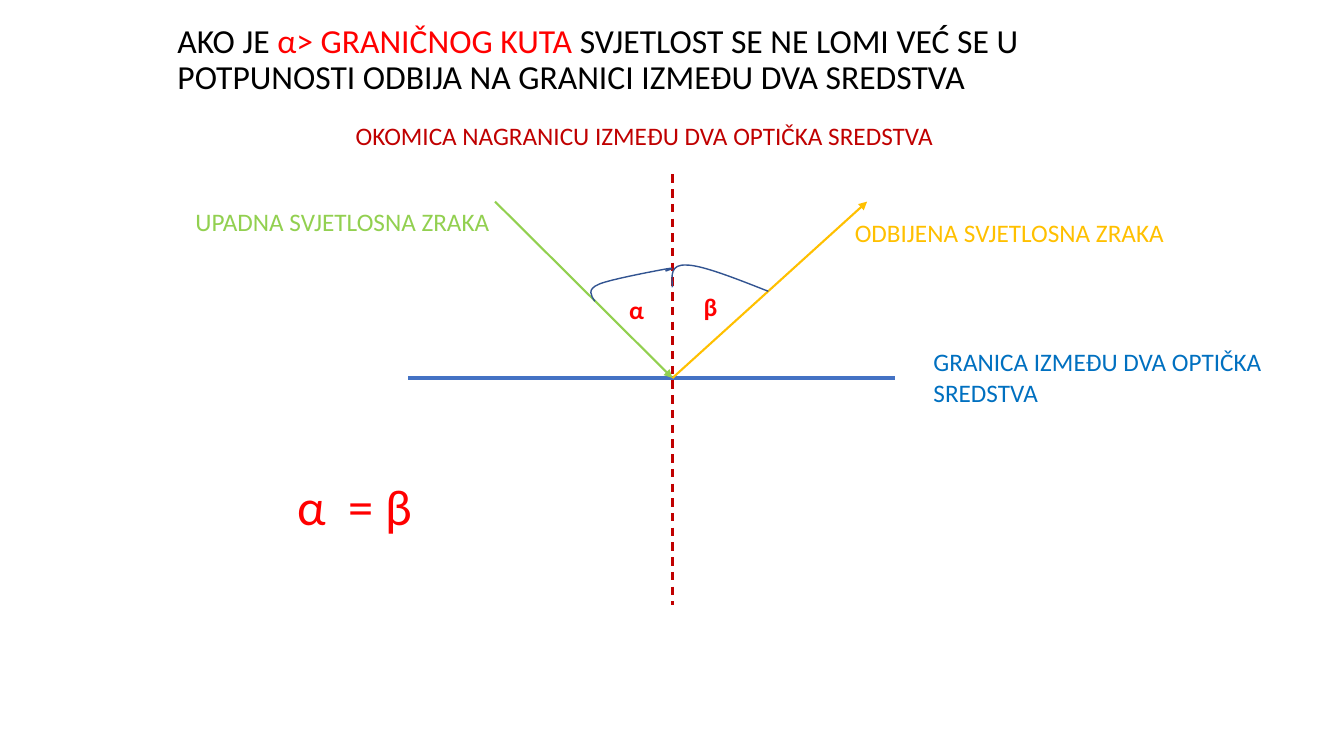
from dataclasses import dataclass

from lxml import etree
from pptx import Presentation
from pptx.dml.color import RGBColor
from pptx.enum.dml import MSO_LINE
from pptx.enum.shapes import MSO_CONNECTOR
from pptx.enum.text import MSO_ANCHOR, MSO_AUTO_SIZE, PP_ALIGN
from pptx.oxml.ns import qn
from pptx.slide import Slide
from pptx.util import Pt

STRAIGHT = MSO_CONNECTOR.STRAIGHT
DASH = MSO_LINE.DASH
TOP = MSO_ANCHOR.TOP
LEFT = PP_ALIGN.LEFT
FIXED = MSO_AUTO_SIZE.NONE
GROW = MSO_AUTO_SIZE.SHAPE_TO_FIT_TEXT

EMU_PER_PX = 9144  # 100 px to the inch
FONT = "Calibri"
TITLE_ONLY_LAYOUT = 5

BLACK = "000000"
RED = "FF0000"
DARK_RED = "C00000"
GREEN = "92D050"
GOLD = "FFC000"
BLUE = "0070C0"
BOUNDARY_BLUE = "4472C4"
ARC_BLUE = "325491"

Point = tuple[int, int]


@dataclass(frozen=True)
class Line:
    start: Point
    end: Point
    color: str
    width: float = 1.5
    dashed: bool = False
    arrow: bool = False


@dataclass(frozen=True)
class Label:
    text: str
    left: int
    top: int
    width: int
    height: int
    color: str
    size: int = 18
    bold: bool = False


HIT = (667, 375)

LINES = [
    Line((405, 375), (888, 375), BOUNDARY_BLUE, width=3),
    Line((667, 173), (667, 600), DARK_RED, dashed=True),
    Line((491, 200), HIT, GREEN, arrow=True),
    Line(HIT, (860, 200), GOLD, arrow=True),
]

# Start point, then three Bézier points for each curve
ANGLE_ARCS: list[list[Point]] = [
    [(590, 299), (586, 293), (582, 287), (594, 282), (605, 277), (660, 267),
     (660, 267), (671, 265), (666, 267), (660, 269)],
    [(667, 285), (666, 273), (665, 262), (681, 263), (696, 263), (729, 276),
     (762, 289)],
]

HEADING = [
    ("AKO JE ", BLACK),
    ("α˃ GRANIČNOG KUTA ", RED),
    ("SVJETLOST SE NE LOMI VEĆ SE U POTPUNOSTI ODBIJA NA GRANICI "
     "IZMEĐU DVA SREDSTVA", BLACK),
]

LABELS = [
    Label("α", 614, 287, 52, 40, RED, bold=True),
    Label("α  = β", 285, 466, 188, 71, RED, size=36),
    Label("OKOMICA NAGRANICU IZMEĐU DVA OPTIČKA SREDSTVA",
          343, 114, 597, 40, DARK_RED),
    Label("UPADNA SVJETLOSNA ZRAKA", 184, 200, 318, 40, GREEN),
    Label("ODBIJENA SVJETLOSNA ZRAKA", 838, 211, 347, 40, GOLD),
    Label("GRANICA IZMEĐU DVA OPTIČKA SREDSTVA", 916, 339, 385, 71, BLUE),
    Label("β", 688, 284, 36, 40, RED, bold=True),
]


def px(*lengths: int) -> list[int]:
    """Turn px into EMU."""
    return [length * EMU_PER_PX for length in lengths]


def rgb(color: str) -> RGBColor:
    return RGBColor.from_string(color)


def fill_heading(slide: Slide) -> None:
    title = slide.shapes.title
    title.left, title.top, title.width, title.height = px(166, 19, 1000, 93)
    frame = title.text_frame
    frame.word_wrap = True
    frame.auto_size = FIXED
    frame.vertical_anchor = TOP
    para = frame.paragraphs[0]
    para.alignment = LEFT
    para.line_spacing = 0.9
    para.font.name = FONT
    para.font.size = Pt(24)
    for text, color in HEADING:
        span = para.add_run()
        span.text = text
        span.font.color.rgb = rgb(color)


def add_line(slide: Slide, line: Line) -> None:
    connector = slide.shapes.add_connector(
        STRAIGHT, *px(*line.start, *line.end))
    connector.line.color.rgb = rgb(line.color)
    connector.line.width = Pt(line.width)
    if line.dashed:
        connector.line.dash_style = DASH
    properties = connector._element.spPr
    if line.arrow:
        outline = properties.find(qn("a:ln"))
        etree.SubElement(outline, qn("a:tailEnd"), type="triangle")
    etree.SubElement(properties, qn("a:effectLst"))


def add_arc(slide: Slide, points: list[Point]) -> None:
    """Draw a freeform through Bézier points, three for each curve."""
    builder = slide.shapes.build_freeform(*points[0], scale=EMU_PER_PX)
    builder.add_line_segments(points[1:], close=False)
    arc = builder.convert_to_shape()
    segments = list(arc._element.iter(qn("a:lnTo")))
    for first in range(0, len(segments), 3):
        curve = etree.Element(qn("a:cubicBezTo"))
        segments[first].addprevious(curve)
        for segment in segments[first:first + 3]:
            curve.append(segment[0])
            segment.getparent().remove(segment)
    arc.fill.background()
    arc.line.color.rgb = rgb(ARC_BLUE)
    arc.line.width = Pt(1)
    arc.shadow.inherit = False


def add_label(slide: Slide, label: Label) -> None:
    box = slide.shapes.add_textbox(
        *px(label.left, label.top, label.width, label.height))
    frame = box.text_frame
    frame.word_wrap = True
    frame.auto_size = GROW
    para = frame.paragraphs[0]
    para.text = label.text
    para.font.name = FONT
    para.font.size = Pt(label.size)
    para.font.bold = label.bold
    para.font.color.rgb = rgb(label.color)


def main() -> None:
    deck = Presentation()
    deck.slide_width, deck.slide_height = px(1333, 750)
    page = deck.slides.add_slide(deck.slide_layouts[TITLE_ONLY_LAYOUT])
    fill_heading(page)
    for line in LINES:
        add_line(page, line)
    for points in ANGLE_ARCS:
        add_arc(page, points)
    for label in LABELS:
        add_label(page, label)
    deck.save("out.pptx")


if __name__ == "__main__":
    main()
